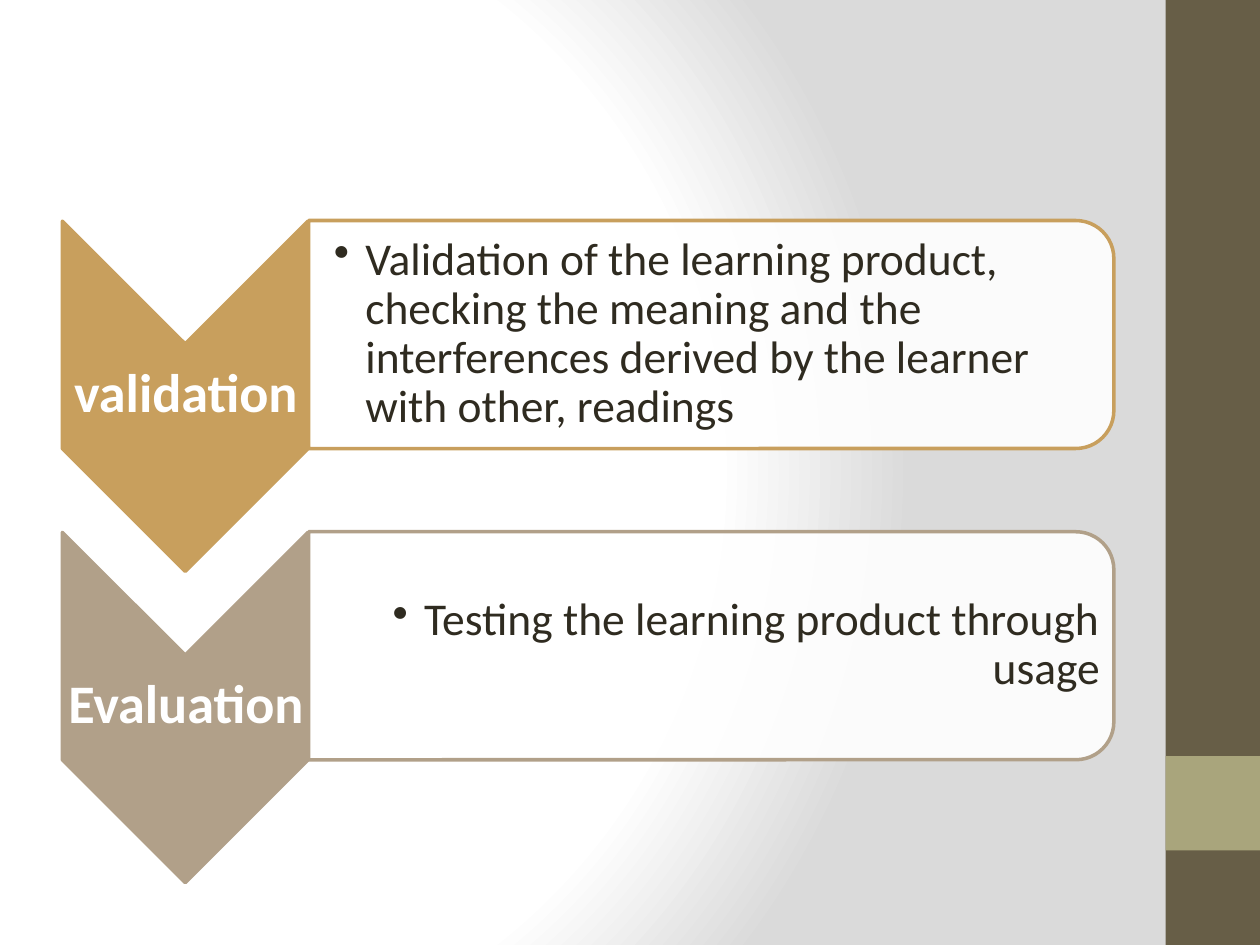
from lxml import etree
from pptx import Presentation
from pptx import util as u
from pptx.dml.color import RGBColor
from pptx.enum import shapes, text
from pptx.oxml import parse_xml
from pptx.oxml.ns import nsdecls, qn

WHITE = RGBColor(0xFF, 0xFF, 0xFF)
GREY = RGBColor(0xDA, 0xDA, 0xDA)
BROWN = RGBColor(0x67, 0x5E, 0x47)
OLIVE = RGBColor(0xA9, 0xA5, 0x7C)
GOLD = RGBColor(0xC8, 0x9F, 0x5D)
TAUPE = RGBColor(0xB1, 0xA0, 0x89)
INK = RGBColor(0x2F, 0x2B, 0x20)
KIND = shapes.MSO_SHAPE
ALIGN = text.PP_ALIGN
TOP, STEP = 2.17, 2.47
STAGES = [
    ("validation", GOLD, ALIGN.LEFT,
     "Validation of the learning product, checking the meaning and the "
     "interferences derived by the learner with other, readings"),
    ("Evaluation", TAUPE, ALIGN.RIGHT,
     "Testing the learning product through usage"),
]


def add_glow(slide):
    """Fill the background with a round white to grey gradient."""
    slide.background.fill.gradient()
    grad = slide.element.find(".//" + qn("a:gradFill"))
    for child in list(grad):
        grad.remove(child)
    stops = "".join(
        f'<a:gs pos="{pos * 1000}"><a:srgbClr val="{color}"/></a:gs>'
        for pos, color in ((0, WHITE), (75, WHITE), (100, GREY)))
    grad.append(parse_xml(f'<a:gsLst {nsdecls("a")}>{stops}</a:gsLst>'))
    grad.append(parse_xml(
        f'<a:path {nsdecls("a")} path="circle"><a:fillToRect l="20000" '
        't="50000" r="100000" b="50000"/></a:path>'))


def add_shape(slide, kind, box, fill, line=None, turn=0, alpha=None):
    """Add a filled preset shape."""
    shape = slide.shapes.add_shape(kind, *map(u.Inches, box))
    shape.shadow.inherit = False
    shape.rotation = turn
    shape.fill.solid()
    shape.fill.fore_color.rgb = fill
    if alpha:
        tint = shape.element.spPr.find(".//" + qn("a:srgbClr"))
        etree.SubElement(tint, qn("a:alpha"), val=str(alpha * 1000))
    if line:
        shape.line.color.rgb = line
        shape.line.width = u.Pt(2)
    else:
        shape.line.fill.background()


def add_text(slide, box, words, size, color, align, left=0.02, bold=False):
    """Add a middle-anchored text box and return its paragraph."""
    frame = slide.shapes.add_textbox(*map(u.Inches, box)).text_frame
    frame.word_wrap = True
    frame.vertical_anchor = text.MSO_ANCHOR.MIDDLE
    frame.margin_left = u.Inches(left)
    frame.margin_top = frame.margin_right = frame.margin_bottom = u.Inches(0.02)
    para = frame.paragraphs[0]
    para.alignment = align
    para.line_spacing = 0.9
    run = para.add_run()
    run.text = words
    run.font.name = "Calibri"
    run.font.size = u.Pt(size)
    run.font.bold = bold
    run.font.color.rgb = color
    return para


def add_bullet(para):
    """Give a paragraph a hanging bullet."""
    props = para._p.get_or_add_pPr()
    props.set("marL", str(u.Inches(0.25)))
    props.set("indent", str(u.Inches(-0.25)))
    etree.SubElement(props, qn("a:buChar"), char="•")


def add_stage(slide, top, name, color, align, words):
    """Add a chevron with its name and the panel that explains it."""
    add_shape(slide, KIND.CHEVRON, (0.08, top, 2.78, 1.95), color, color, 90)
    add_text(slide, (0.5, top + 0.55, 1.95, 0.83), name, 31, WHITE,
             ALIGN.CENTER, bold=True)
    add_shape(slide, KIND.ROUND_2_SAME_RECTANGLE,
              (4.74, top - 2.71, 1.81, 6.39), WHITE, color, 90, 90)
    add_bullet(add_text(slide, (2.45, top - 0.33, 6.3, 1.63), words, 26, INK,
                        align, left=0.2))


def main():
    """Build the slide and save it."""
    deck = Presentation()
    deck.slide_width, deck.slide_height = u.Inches(10), u.Inches(7.5)
    slide = deck.slides.add_slide(deck.slide_layouts[6])
    add_glow(slide)
    add_shape(slide, KIND.RECTANGLE, (9.25, 0, 0.75, 7.5), BROWN)
    add_shape(slide, KIND.RECTANGLE, (9.25, 6, 0.75, 0.75), OLIVE)
    for row, stage in enumerate(STAGES):
        add_stage(slide, TOP + row * STEP, *stage)
    deck.save("out.pptx")


if __name__ == "__main__":
    main()
